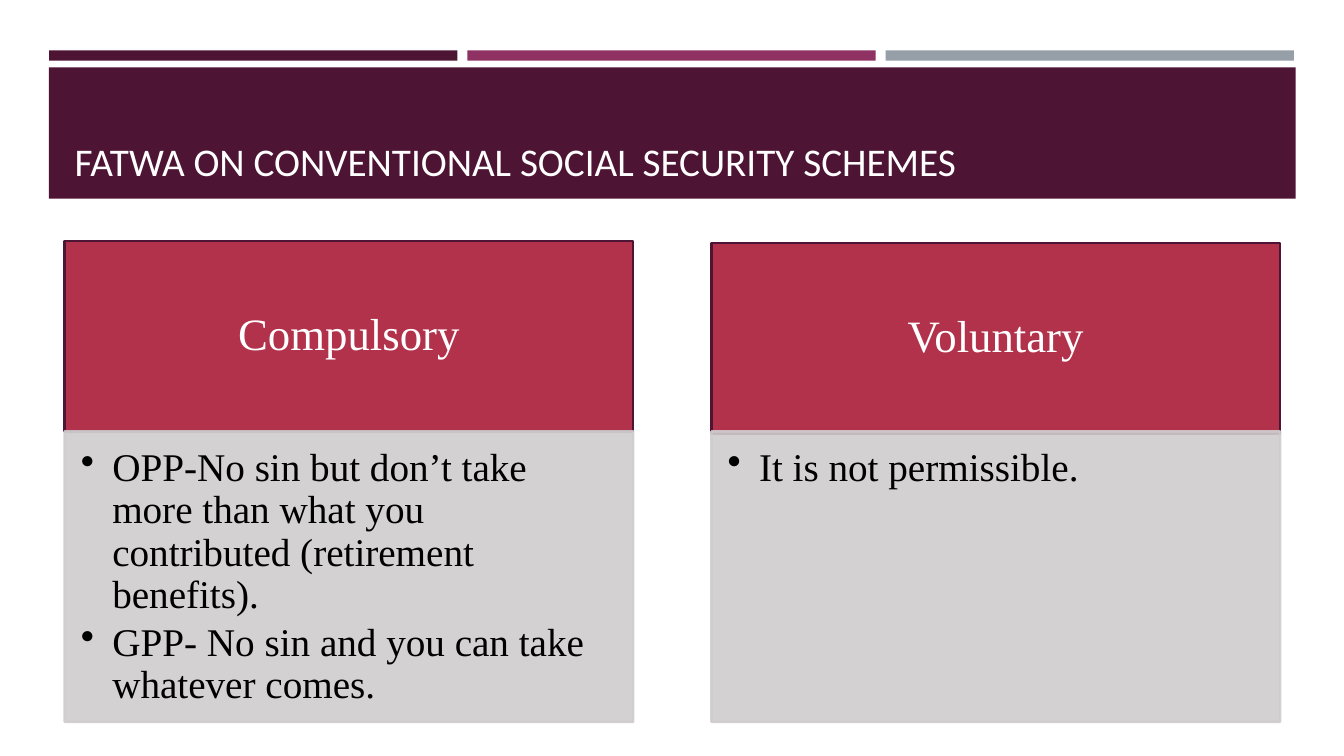
"""Build a slide comparing fatwas on compulsory and voluntary social security schemes."""
import dataclasses

import pptx
import pptx.dml.color
import pptx.enum.shapes
import pptx.enum.text
import pptx.oxml.ns
import pptx.util
from lxml import etree

Cm = pptx.util.Cm
Pt = pptx.util.Pt
RGB = pptx.dml.color.RGBColor.from_string
ANCHOR = pptx.enum.text.MSO_ANCHOR
ALIGN = pptx.enum.text.PP_ALIGN
qn = pptx.oxml.ns.qn


@dataclasses.dataclass(frozen=True)
class Theme:
    plum: str = "4D1434"
    magenta: str = "903163"
    slate: str = "969FA7"
    crimson: str = "B2324B"
    pale: str = "D0CCCE"
    white: str = "FFFFFF"
    black: str = "000000"
    title_font: str = "Calibri"
    body_font: str = "Times New Roman"
    title_size: int = 28
    heading_size: int = 32
    body_size: int = 28


theme = Theme()
prs = pptx.Presentation()
prs.slide_width, prs.slide_height = Cm(33.87), Cm(19.05)
s = prs.slides.add_slide(prs.slide_layouts[6])


def add_box(left, top, width, height, fill, line=None):
    """Add a flat rectangle, outlined when a line colour is given."""
    sp = s.shapes.add_shape(pptx.enum.shapes.MSO_SHAPE.RECTANGLE,
                            Cm(left), Cm(top), Cm(width), Cm(height))
    sp.shadow.inherit = False
    sp.fill.solid()
    sp.fill.fore_color.rgb = RGB(fill)
    if line:
        sp.line.color.rgb = RGB(line)
        sp.line.width = Pt(1.75)
    else:
        sp.line.fill.background()
    return sp


def set_text(sp, lines, anchor, insets, font, size, color, align=ALIGN.LEFT):
    """Write one paragraph per line and return the paragraphs."""
    tf = sp.text_frame
    tf.word_wrap = True
    tf.vertical_anchor = anchor
    tf.margin_left, tf.margin_top, tf.margin_right, tf.margin_bottom = map(Cm, insets)
    tf.text = "\n".join(lines)
    for p in tf.paragraphs:
        p.alignment = align
        p.font.name = font
        p.font.size = Pt(size)
        p.font.color.rgb = RGB(color)
    return tf.paragraphs


for i, color in enumerate((theme.plum, theme.magenta, theme.slate)):
    add_box(1.24 + i * 10.54, 1.27, 10.29, 0.26, color)

add_box(1.23, 1.7, 31.42, 3.31, theme.plum)
title = s.shapes.add_textbox(Cm(1.63), Cm(1.96), Cm(30.63), Cm(2.82))
set_text(title, ["FATWA ON CONVENTIONAL SOCIAL SECURITY SCHEMES"], ANCHOR.BOTTOM,
         (0.25, 0.13, 0.25, 0.13), theme.title_font, theme.title_size, theme.white)

cards = [
    (1.63, 6.07, "Compulsory", [
        "OPP-No sin but don’t take more than what you contributed (retirement benefits).",
        "GPP- No sin and you can take whatever comes.",
    ]),
    (17.93, 6.12, "Voluntary", ["It is not permissible."]),
]
for left, top, heading, points in cards:
    head = add_box(left, top, 14.33, 4.8, theme.crimson, theme.plum)
    for p in set_text(head, [heading], ANCHOR.MIDDLE, (0.64, 0.36, 0.64, 0.36),
                      theme.body_font, theme.heading_size, theme.white, ALIGN.CENTER):
        p.line_spacing = 0.9

    body = add_box(left, 10.87, 14.33, 7.32, theme.pale, theme.pale)
    for color in body._element.spPr.iter(qn("a:srgbClr")):
        etree.SubElement(color, qn("a:alpha"), val="90000")
    for p in set_text(body, points, ANCHOR.TOP, (0.41, 0.41, 0.56, 0.61),
                      theme.body_font, theme.body_size, theme.black):
        p.line_spacing = 0.9
        p.space_after = Pt(4)
        pPr = p._p.get_or_add_pPr()
        pPr.set("marL", str(Cm(0.79)))
        pPr.set("indent", str(-Cm(0.79)))
        bullet = etree.Element(qn("a:buChar"), char="•")
        pPr.find(qn("a:defRPr")).addprevious(bullet)

prs.save("out.pptx")
